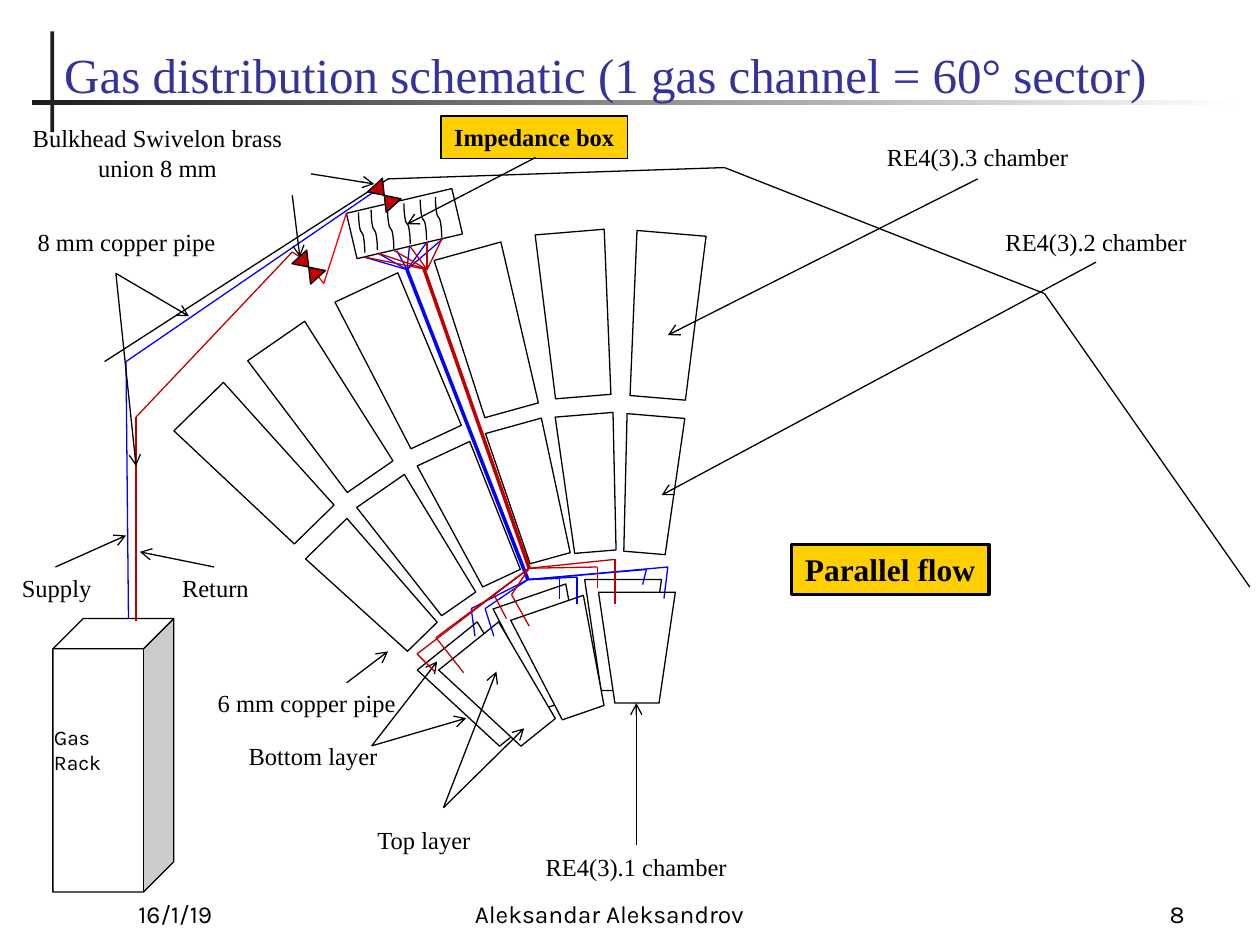
from dataclasses import dataclass
from itertools import pairwise
from typing import Iterable

from lxml.etree import SubElement
from pptx import Presentation
from pptx.dml.color import RGBColor
from pptx.enum.shapes import MSO_CONNECTOR as Link, MSO_SHAPE as Preset
from pptx.enum.text import MSO_ANCHOR as Anchor, PP_ALIGN as Align
from pptx.oxml.ns import qn
from pptx.util import Inches, Pt

Point = tuple[float, float]
Frame = tuple[float, float, float, float]


@dataclass(frozen=True)
class Theme:
    black: str = "000000"
    white: str = "FFFFFF"
    rule: str = "1C1C1C"
    title: str = "333399"
    highlight: str = "FFCF01"
    supply: str = "0000FF"
    gas_return: str = "C00000"
    bright_return: str = "FF0000"
    serif: str = "Times New Roman"
    sans: str = "Karla"
    title_size: float = 28
    callout_size: float = 18
    label_size: float = 14
    small_size: float = 12
    thin: float = 0.75
    trunk: float = 2


THEME = Theme()


@dataclass(frozen=True)
class ChamberKind:
    width: float
    height: float
    taper: float


@dataclass(frozen=True)
class Label:
    text: str
    frame: Frame
    font: str = THEME.serif
    size: float = THEME.label_size
    align: Align = Align.CENTER
    wrap: bool = False
    bold: bool = False
    anchor: Anchor = Anchor.TOP


INNER = ChamberKind(0.61, 0.88, 0.213)   # RE4(3).1
MIDDLE = ChamberKind(0.46, 1.09, 0.142)  # RE4(3).2
OUTER = ChamberKind(0.55, 1.31, 0.099)   # RE4(3).3

# Rotation, then left and top of the outer and the middle chamber
SECTORS = [
    (184.8, (5, 1.85), (4.93, 3.3)), (175.3, (4.3, 1.84), (4.45, 3.29)),
    (164.5, (3.61, 1.97), (3.99, 3.36)), (155, (2.91, 2.22), (3.52, 3.55)),
    (145.3, (2.29, 2.59), (3.1, 3.8)), (135.6, (1.76, 3.04), (2.74, 4.12)),
]
BOTTOM_LAYER = [(141.2, (3.52, 5.03)), (161, (4.04, 4.71)), (180, (4.64, 4.6))]
TOP_LAYER = [(180, (4.75, 4.7)), (141.2, (3.69, 5.03)), (161, (4.18, 4.8))]

IMPEDANCES = [(2.71, 1.82), (2.81, 1.8), (2.94, 1.79), (3.07, 1.75), (3.2, 1.72), (3.32, 1.7)]
ENVELOPE = [(0.83, 2.87), (3.08, 1.42), (5.75, 1.33), (8.29, 2.33), (9.92, 4.66)]
VALVES = [(2.37, 2.01), (2.97, 1.44)]

# Hubs where the pipes fan out, with the points they reach
SUPPLY_TOP, SUPPLY_HUB = (3.23, 2.14), (4.19, 4.6)
RETURN_TOP, RETURN_HUB = (3.39, 2.14), (4.2, 4.51)
SUPPLY_PORTS = [(2.89, 2.04), (3, 2.01), (3.25, 1.95), (3.15, 1.99), (3.39, 1.92), (3.52, 1.89)]
RETURN_PORTS = [(2.89, 2.04), (3, 2.01), (3.25, 1.95), (3.13, 1.99), (3.39, 1.92), (3.51, 1.89)]
SUPPLY_BACK = [((3.74, 4.83), (3.77, 5.05)), ((4.44, 4.59), (4.44, 4.75)), ((5.13, 4.52), (5.1, 4.64))]
SUPPLY_FRONT = [((3.85, 4.83), (3.92, 5.05)), ((4.58, 4.58), (4.58, 4.79)), ((5.3, 4.5), (5.27, 4.75))]
RETURN_DROPS = [
    ((4.88, 4.44), (4.88, 4.79)), ((4.74, 4.5), (4.74, 4.67)), ((3.92, 4.72), (4.02, 4.91)),
    ((4.06, 4.72), (4.2, 4.97)), ((3.46, 5.06), (3.68, 5.34)), ((3.31, 5.19), (3.45, 5.33)),
]

# Each start point with the places it points at
ARROWS = [
    ((2.47, 1.38), [(2.97, 1.46)]), ((2.32, 1.55), [(2.38, 2.04)]),
    ((0.92, 2.17), [(1.5, 2.51), (1.08, 3.7)]), ((2.75, 5.42), [(3.08, 5.17)]),
    ((7.76, 1.42), [(5.3, 2.66)]), ((8.7, 2.08), [(5.25, 3.93)]),
    ((4.25, 1.25), [(3.23, 1.78)]), ((5.05, 6.71), [(5.05, 5.58)]),
    ((2.95, 5.92), [(3.47, 5.25), (3.7, 5.7)]),
    ((0.44, 4.5), [(1, 4.25)]), ((1.7, 4.5), [(1.11, 4.38)]),
]
TOP_LAYER_ARROWS = ((3.52, 6.41), [(3.94, 5.33), (4.16, 5.78)])

LABELS = [
    Label("Bulkhead Swivelon brass union 8 mm", (0.09, 0.93, 2.32, 0.57), wrap=True),
    Label("Top layer", (2.89, 6.5, 0.95, 0.34)),
    Label("8 mm copper pipe", (0.19, 1.75, 1.63, 0.34)),
    Label("6 mm copper pipe", (1.62, 5.41, 1.63, 0.34)),
    Label("RE4(3).3 chamber", (6.93, 1.08, 1.66, 0.34)),
    Label("RE4(3).2 chamber", (7.87, 1.75, 1.66, 0.34)),
    Label("RE4(3).1 chamber", (4.22, 6.71, 1.66, 0.34)),
    Label("Bottom layer", (1.87, 5.83, 1.23, 0.34)),
    Label("Supply", (0.07, 4.5, 0.76, 0.34)),
    Label("Return", (1.34, 4.5, 0.74, 0.34)),
    Label("Gas Rack", (0.33, 5.7, 0.8, 0.3), THEME.sans, THEME.small_size, Align.LEFT, True),
    Label("16/1/19", (1, 6.92, 2.08, 0.5), THEME.sans, align=Align.LEFT, wrap=True, anchor=Anchor.BOTTOM),
    Label("Aleksandar Aleksandrov", (3.67, 6.92, 3.17, 0.5), THEME.sans, align=Align.LEFT,
          wrap=True, anchor=Anchor.BOTTOM),
    Label("8", (7.42, 6.92, 2.08, 0.5), THEME.sans, align=Align.RIGHT, wrap=True, anchor=Anchor.BOTTOM),
]
IMPEDANCE_LABEL = Label("Impedance box", (3.5, 0.92, 1.48, 0.34), bold=True)
FLOW_LABEL = Label("Parallel flow", (6.28, 4.32, 1.57, 0.4), size=THEME.callout_size, bold=True)


def rgb(color: str) -> RGBColor:
    return RGBColor.from_string(color)


def draw_shape(slide, preset: Preset, frame: Frame, fill: str = THEME.white,
               line_width: float = THEME.thin, rotation: float = 0):
    shape = slide.shapes.add_shape(preset, *map(Inches, frame))
    shape.shadow.inherit = False
    shape.rotation = rotation
    shape.fill.solid()
    shape.fill.fore_color.rgb = rgb(fill)
    if line_width:
        shape.line.color.rgb = rgb(THEME.black)
        shape.line.width = Pt(line_width)
    else:
        shape.line.fill.background()
    return shape


def draw_line(slide, start: Point, end: Point, color: str = THEME.black,
              width: float = THEME.thin, arrow: bool = False, kind: Link = Link.STRAIGHT):
    line = slide.shapes.add_connector(kind, *map(Inches, (*start, *end)))
    line.line.color.rgb = rgb(color)
    line.line.width = Pt(width)
    if arrow:
        SubElement(line.line._get_or_add_ln(), qn("a:tailEnd"), type="arrow")
    SubElement(line._element.spPr, qn("a:effectLst"))
    return line


def draw_path(slide, points: Iterable[Point], color: str = THEME.black) -> None:
    for start, end in pairwise(points):
        draw_line(slide, start, end, color)


def draw_fan(slide, hub: Point, ends: Iterable[Point], color: str = THEME.black, arrow: bool = False) -> None:
    for end in ends:
        draw_line(slide, hub, end, color, arrow=arrow)


def draw_drops(slide, hub: Point, drops: list[tuple[Point, Point]], color: str) -> None:
    for bend, end in drops:
        draw_path(slide, [hub, bend, end], color)


def draw_chamber(slide, kind: ChamberKind, rotation: float, corner: Point) -> None:
    shape = draw_shape(slide, Preset.TRAPEZOID, (*corner, kind.width, kind.height), rotation=rotation)
    shape.adjustments[0] = kind.taper


def write_text(shape, label: Label, color: str = THEME.black) -> None:
    frame = shape.text_frame
    frame.word_wrap = label.wrap
    frame.vertical_anchor = label.anchor
    paragraph = frame.paragraphs[0]
    paragraph.alignment = label.align
    run = paragraph.add_run()
    run.text = label.text
    run.font.name, run.font.size, run.font.bold = label.font, Pt(label.size), label.bold
    run.font.color.rgb = rgb(color)


def draw_title(slide) -> None:
    draw_shape(slide, Preset.RECTANGLE, (0.4, 0.25, 0.03, 0.8), THEME.rule, 0)
    bar = draw_shape(slide, Preset.RECTANGLE, (0.25, 0.79, 9.58, 0.04), THEME.rule, 0)
    bar.fill.gradient()
    bar.fill.gradient_angle = 0
    for stop, color in zip(bar.fill.gradient_stops, (THEME.rule, THEME.white)):
        stop.color.rgb = rgb(color)
    title = slide.shapes.title
    label = Label("Gas distribution schematic (1 gas channel = 60° sector)", (0.41, 0.12, 9.23, 0.75),
                  size=THEME.title_size, align=Align.LEFT, wrap=True, anchor=Anchor.BOTTOM)
    title.left, title.top, title.width, title.height = map(Inches, label.frame)
    write_text(title, label, THEME.title)
    slide.shapes._spTree.append(title._element)  # in front of the rules


def main() -> None:
    presentation = Presentation()
    presentation.slide_width, presentation.slide_height = Inches(10), Inches(7.5)
    slide = presentation.slides.add_slide(presentation.slide_layouts[5])
    draw_title(slide)

    # Chambers of the sector and the envelope around them
    for rotation, corner in BOTTOM_LAYER:
        draw_chamber(slide, INNER, rotation, corner)
    for rotation, outer, middle in SECTORS:
        draw_chamber(slide, OUTER, rotation, outer)
        draw_chamber(slide, MIDDLE, rotation, middle)
    draw_path(slide, ENVELOPE)

    # Impedance box with its curved channels
    draw_shape(slide, Preset.RECTANGLE, (2.78, 1.59, 0.86, 0.37), rotation=346.8)
    for left, top in IMPEDANCES:
        curve = draw_line(slide, (left + 0.32, top), (left, top + 0.05), kind=Link.CURVE)
        curve._element.spPr.find(qn("a:xfrm")).set("rot", str(270 * 60000))

    # Rack, main pipes and valves
    draw_shape(slide, Preset.CUBE, (0.42, 4.91, 0.96, 2.17))
    draw_path(slide, [(1.02, 4.91), (1, 2.87), (3, 1.5)], THEME.supply)
    draw_path(slide, [(1.08, 4.93), (1.08, 3.31), (2.32, 2), (2.38, 2.04)], THEME.gas_return)
    draw_path(slide, [(2.53, 2.2), (2.57, 2.25), (2.75, 1.69)], THEME.bright_return)
    for corner in VALVES:
        draw_shape(slide, Preset.FLOWCHART_COLLATE, (*corner, 0.16, 0.22), THEME.gas_return, rotation=317.6)

    # Labels and pointers
    for label in LABELS:
        write_text(slide.shapes.add_textbox(*map(Inches, label.frame)), label)
    for label, width in ((IMPEDANCE_LABEL, THEME.thin), (FLOW_LABEL, 1.75)):
        write_text(draw_shape(slide, Preset.RECTANGLE, label.frame, THEME.highlight, width), label)
    for start, ends in ARROWS:
        draw_fan(slide, start, ends, arrow=True)

    # Top layer between the back and front pipes
    draw_drops(slide, SUPPLY_HUB, SUPPLY_BACK, THEME.supply)
    for rotation, corner in TOP_LAYER:
        draw_chamber(slide, INNER, rotation, corner)
    draw_fan(slide, SUPPLY_TOP, SUPPLY_PORTS, THEME.supply)
    draw_line(slide, SUPPLY_TOP, SUPPLY_HUB, THEME.supply, THEME.trunk)
    draw_drops(slide, SUPPLY_HUB, SUPPLY_FRONT, THEME.supply)
    draw_fan(slide, *TOP_LAYER_ARROWS, arrow=True)
    draw_line(slide, (3.36, 2.12), RETURN_HUB, THEME.gas_return, THEME.trunk)
    draw_fan(slide, RETURN_TOP, RETURN_PORTS, THEME.gas_return)
    draw_drops(slide, RETURN_HUB, RETURN_DROPS, THEME.gas_return)

    presentation.save("out.pptx")


if __name__ == "__main__":
    main()
